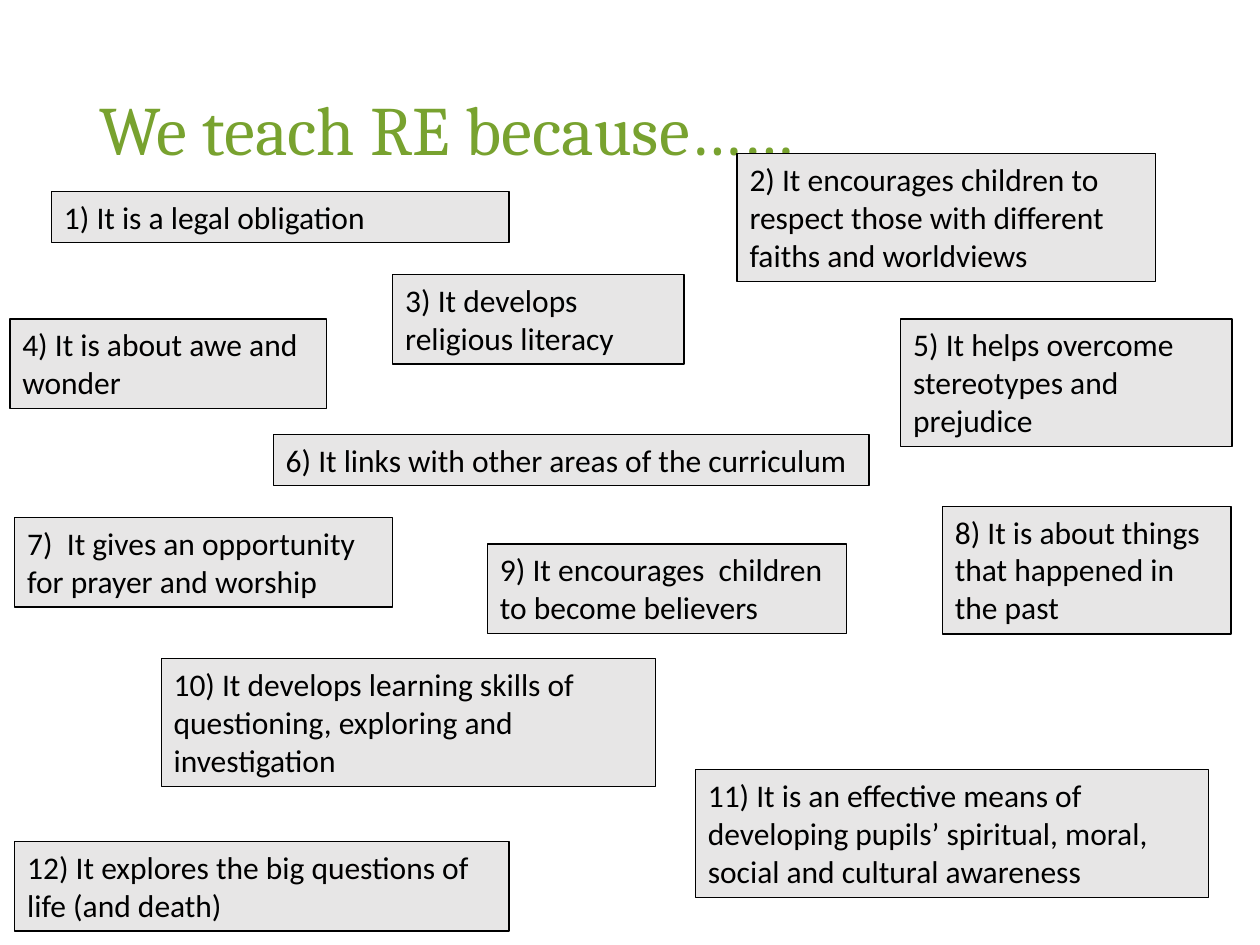
from dataclasses import dataclass

from pptx import Presentation
from pptx.dml.color import RGBColor
from pptx.enum.shapes import MSO_SHAPE
from pptx.enum.text import MSO_ANCHOR, MSO_AUTO_SIZE, PP_ALIGN
from pptx.util import Cm, Pt


@dataclass(frozen=True)
class Theme:
    """Colours, fonts and type sizes of the slide."""
    title_color: RGBColor = RGBColor(0x78, 0xA2, 0x2F)
    text_color: RGBColor = RGBColor(0, 0, 0)
    card_fill: RGBColor = RGBColor(0xE7, 0xE6, 0xE6)
    title_font: str = "Cambria"
    body_font: str = "Calibri"
    title_size: float = 39.6
    body_size: float = 18
    line_width: float = 0.75


THEME = Theme()
TITLE_BOX = (1.75, 1.02, 21.89, 2.72)
LINE_HEIGHT = 0.77
CARD_PADDING = 0.26

REASONS = [
    (1.04, 3.86, 9.22, 1, "1) It is a legal obligation"),
    (14.86, 3.1, 8.43, 3, "2) It encourages children to respect those with different faiths and worldviews"),
    (7.92, 5.54, 5.87, 2, "3) It develops religious literacy"),
    (0.2, 6.43, 6.38, 2, "4) It is about awe and wonder"),
    (18.16, 6.43, 6.68, 3, "5) It helps overcome stereotypes and prejudice"),
    (5.51, 8.76, 12.01, 1, "6) It links with other areas of the curriculum"),
    (0.3, 10.44, 7.62, 2, "7)  It gives an opportunity for prayer and worship"),
    (19, 10.21, 5.82, 3, "8) It is about things that happened in the past"),
    (9.83, 10.97, 7.24, 2, "9) It encourages  children to become believers"),
    (3.25, 13.28, 9.96, 3, "10) It develops learning skills of questioning, exploring and investigation"),
    (14.02, 15.52, 10.34, 3,
     "11) It is an effective means of developing pupils’ spiritual, moral, social and cultural awareness"),
    (0.3, 16.97, 9.96, 2, "12) It explores the big questions of life (and death)"),
]


def write_text(tf, text, *, font, size, color, anchor=MSO_ANCHOR.TOP, spacing=1.0):
    """Write one left-aligned paragraph with the given format."""
    tf.word_wrap = True
    tf.vertical_anchor = anchor
    p = tf.paragraphs[0]
    p.alignment = PP_ALIGN.LEFT
    p.line_spacing = spacing
    r = p.add_run()
    r.text = text
    r.font.name = font
    r.font.size = Pt(size)
    r.font.color.rgb = color


def place_title(s, box, text):
    """Move and format the title placeholder."""
    sp = s.shapes.title
    sp.left, sp.top, sp.width, sp.height = map(Cm, box)
    tf = sp.text_frame
    tf.auto_size = MSO_AUTO_SIZE.NONE
    tf.margin_bottom = Cm(0.3)
    write_text(tf, text, font=THEME.title_font, size=THEME.title_size,
               color=THEME.title_color, anchor=MSO_ANCHOR.BOTTOM, spacing=0.9)


def add_reason(s, left, top, width, lines, text):
    """Add a bordered card whose height follows its number of lines."""
    height = CARD_PADDING + lines * LINE_HEIGHT
    sp = s.shapes.add_shape(MSO_SHAPE.RECTANGLE, *map(Cm, (left, top, width, height)))
    sp.shadow.inherit = False
    sp.fill.solid()
    sp.fill.fore_color.rgb = THEME.card_fill
    sp.line.color.rgb = THEME.text_color
    sp.line.width = Pt(THEME.line_width)
    write_text(sp.text_frame, text, font=THEME.body_font,
               size=THEME.body_size, color=THEME.text_color)
    sp.text_frame.auto_size = MSO_AUTO_SIZE.SHAPE_TO_FIT_TEXT


def main():
    """Build and save the slide."""
    prs = Presentation()
    prs.slide_width, prs.slide_height = Cm(25.4), Cm(19.05)
    s = prs.slides.add_slide(prs.slide_layouts[5])
    place_title(s, TITLE_BOX, "We teach RE because……")
    for reason in REASONS:
        add_reason(s, *reason)
    prs.save("out.pptx")


if __name__ == "__main__":
    main()
